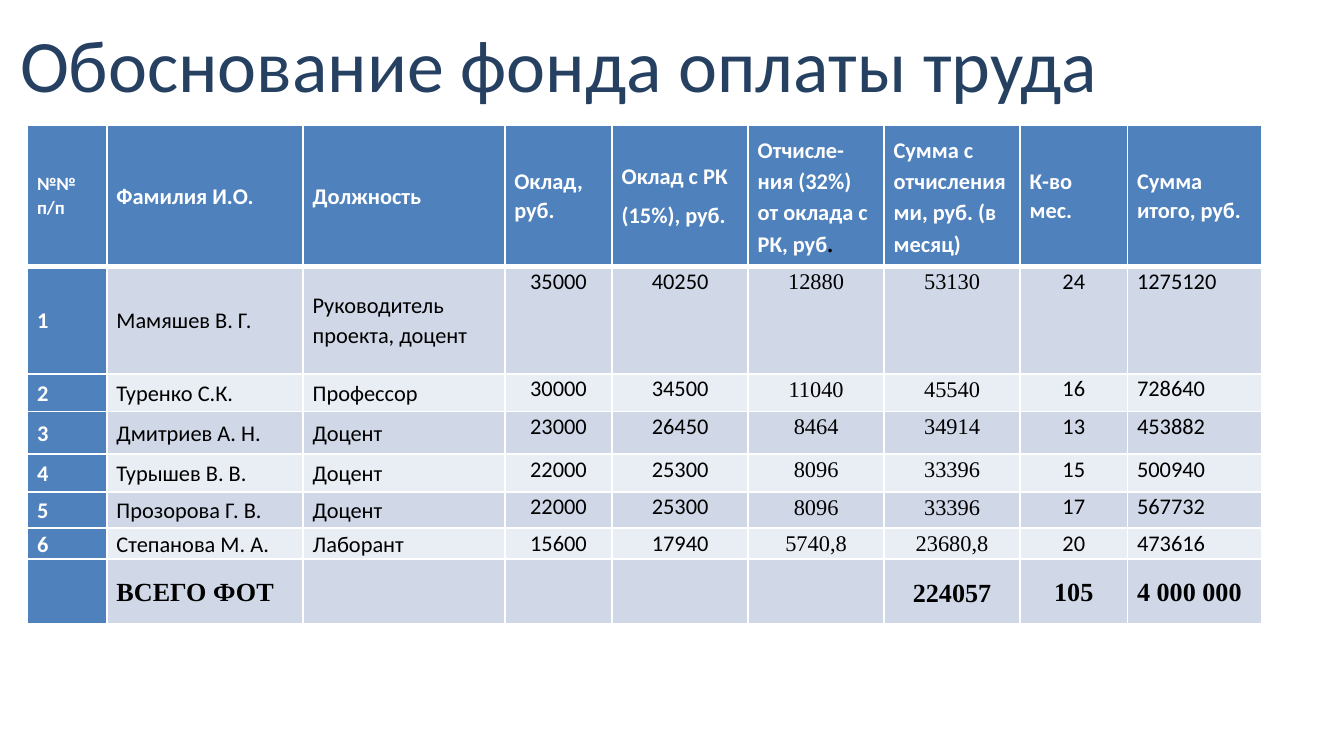
"""Build a slide with a payroll fund table."""
from lxml import etree
from pptx import Presentation
from pptx.dml.color import RGBColor
from pptx.enum.text import MSO_ANCHOR as Anchor, MSO_AUTO_SIZE as AutoSize, PP_ALIGN as Align
from pptx.oxml.ns import qn
from pptx.util import Cm, Pt

NAVY = RGBColor(0x25, 0x40, 0x61)
BLUE = RGBColor(0x4F, 0x81, 0xBD)
DARK_BAND = RGBColor(0xD0, 0xD8, 0xE8)
LIGHT_BAND = RGBColor(0xE9, 0xED, 0xF4)
WHITE = RGBColor(0xFF, 0xFF, 0xFF)
BLACK = RGBColor(0, 0, 0)
SANS, SERIF = "Calibri", "Times New Roman"

COLUMN_WIDTHS = [1.5, 3.71, 3.81, 2.03, 2.57, 2.57, 2.57, 2.03, 2.54]
ROW_HEIGHTS = [2.67, 2.03, 0.71, 0.81, 0.71, 0.69, 0.58, 1.22]
PAYROLL = [
    ["№№ п/п", "Фамилия И.О.", "Должность", "Оклад, руб.", "Оклад с РК\n(15%), руб.",
     "Отчисле-ния (32%) от оклада с РК, руб", "Сумма с отчислениями, руб. (в месяц)",
     "К-во мес.", "Сумма итого, руб."],
    ["1", "Мамяшев В. Г.", "Руководитель\nпроекта, доцент", "35000", "40250", "12880", "53130", "24", "1275120"],
    ["2", "Туренко С.К.", "Профессор", "30000", "34500", "11040", "45540", "16", "728640"],
    ["3", "Дмитриев А. Н.", "Доцент", "23000", "26450", "8464", "34914", "13", "453882"],
    ["4", "Турышев В. В.", "Доцент", "22000", "25300", "8096", "33396", "15", "500940"],
    ["5", "Прозорова Г. В.", "Доцент", "22000", "25300", "8096", "33396", "17", "567732"],
    ["6", "Степанова М. А.", "Лаборант", "15600", "17940", "5740,8", "23680,8", "20", "473616"],
    ["", "ВСЕГО ФОТ", "", "", "", "", "224057", "105", "4 000 000"],
]
TOTAL_ROW = len(PAYROLL) - 1


def add_borders(cell, bottom, top):
    properties = cell._tc.get_or_add_tcPr()
    for side, points in (("L", 1), ("R", 1), ("T", top), ("B", bottom)):
        line = etree.SubElement(properties, qn(f"a:ln{side}"), w=str(Pt(points)))
        fill = etree.SubElement(line, qn("a:solidFill"))
        etree.SubElement(fill, qn("a:srgbClr"), val=str(WHITE))


prs = Presentation()
prs.slide_width, prs.slide_height = Cm(25.4), Cm(14.28)
slide = prs.slides.add_slide(prs.slide_layouts[5])

title = slide.shapes.title
title.left, title.top, title.width, title.height = Cm(0), Cm(1.75), Cm(21.13), Cm(0.56)
heading = title.text_frame
heading.text = "Обоснование фонда оплаты труда"
heading.auto_size = AutoSize.NONE
heading.vertical_anchor = Anchor.BOTTOM
heading.margin_left = heading.margin_right = heading.margin_top = 0
heading.margin_bottom = Cm(0.28)
heading.paragraphs[0].alignment = Align.CENTER
heading_font = heading.paragraphs[0].font
heading_font.name, heading_font.size, heading_font.color.rgb = SANS, Pt(39.6), NAVY

payroll_table = slide.shapes.add_table(
    len(ROW_HEIGHTS), len(COLUMN_WIDTHS), Cm(0.52), Cm(2.36),
    Cm(sum(COLUMN_WIDTHS)), Cm(sum(ROW_HEIGHTS))).table
payroll_table.first_row = payroll_table.horz_banding = False
for column, width in zip(payroll_table.columns, COLUMN_WIDTHS):
    column.width = Cm(width)
for row, height in zip(payroll_table.rows, ROW_HEIGHTS):
    row.height = Cm(height)

for r, entries in enumerate(PAYROLL):
    for c, entry in enumerate(entries):
        cell = payroll_table.cell(r, c)
        is_header, is_total = r == 0, r == TOTAL_ROW
        is_blue = is_header or c == 0
        is_serif = is_total or (not is_header and c in (5, 6))
        add_borders(cell, bottom=3 if is_header else 1, top=3 if r == 1 else 1)
        cell.fill.solid()
        cell.fill.fore_color.rgb = BLUE if is_blue else DARK_BAND if r % 2 else LIGHT_BAND
        cell.margin_left = cell.margin_right = Cm(0.18)
        cell.margin_top = cell.margin_bottom = 0
        cell.vertical_anchor = Anchor.MIDDLE if is_header or is_total or c < 3 else Anchor.TOP
        cell.text = entry
        for i, paragraph in enumerate(cell.text_frame.paragraphs):
            paragraph.line_spacing = 1.15 if c in (5, 6) else 1.07
            if is_header and i:
                paragraph.space_before = Pt(5)
            if not is_header and 3 <= c <= 7:
                paragraph.alignment = Align.CENTER
            font = paragraph.font
            font.name = SERIF if is_serif else SANS
            font.size = Pt(14 if is_total else 10 if is_header and c == 0 else 12)
            font.bold = is_blue or is_total
            font.color.rgb = WHITE if is_blue else BLACK

full_stop = payroll_table.cell(0, 5).text_frame.paragraphs[0].add_run()
full_stop.text = "."
full_stop.font.name, full_stop.font.color.rgb = SERIF, BLACK

for c in (0, 2, 3, 4, 5):
    payroll_table.cell(TOTAL_ROW, c).text_frame.paragraphs[0].font.size = Pt(12)

prs.save("out.pptx")
